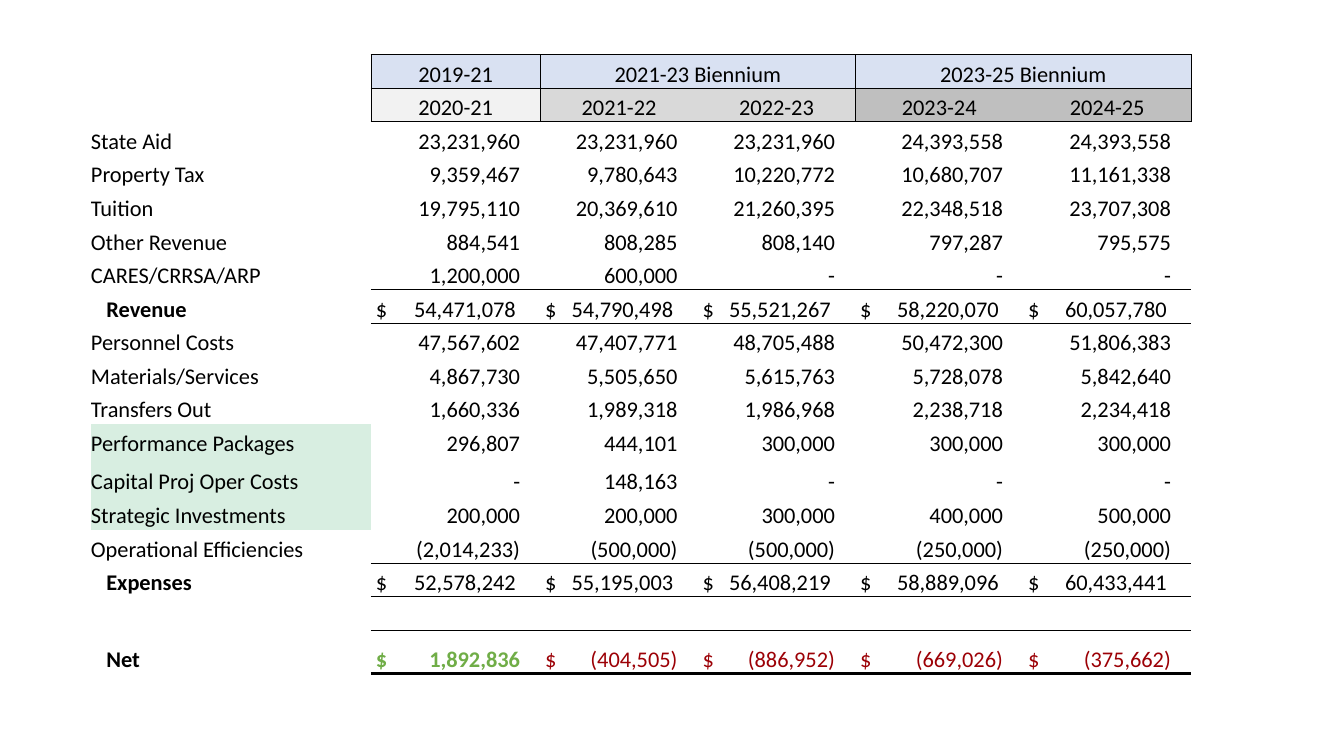
"""Builds a one-slide biennium budget forecast table."""
from lxml import etree
from pptx import Presentation, util as u
from pptx.dml import color
from pptx.enum import text
from pptx.oxml import ns

PX = 6350
COLORS = {
    "ink": "000000", "gain": "70AD47", "loss": "9C0006", "biennium": "D9E1F2",
    "current": "F2F2F2", "next": "D9D9D9", "later": "BFBFBF", "highlight": "D8EEE1",
}
FONT, FONT_SIZE = "Calibri", 16
THIN, THICK = 0.5, 2
COLUMN_WIDTHS = [400, 242, 225, 225, 240, 240]
ROW_HEIGHT = 48
TALL_ROWS = {12: 55, 17: 62}
AMOUNT_INSET, TOTAL_INSET, DOLLAR_INSET, LABEL_INDENT = 29, 35, 7, 22

BIENNIA = [(1, 1, "2019-21"), (2, 3, "2021-23 Biennium"), (4, 5, "2023-25 Biennium")]
YEARS = [("2020-21", "current"), ("2021-22", "next"), ("2022-23", "next"),
         ("2023-24", "later"), ("2024-25", "later")]
BUDGET = [
    ("State Aid", "23,231,960", "23,231,960", "23,231,960", "24,393,558", "24,393,558"),
    ("Property Tax", "9,359,467", "9,780,643", "10,220,772", "10,680,707", "11,161,338"),
    ("Tuition", "19,795,110", "20,369,610", "21,260,395", "22,348,518", "23,707,308"),
    ("Other Revenue", "884,541", "808,285", "808,140", "797,287", "795,575"),
    ("CARES/CRRSA/ARP", "1,200,000", "600,000", "-", "-", "-"),
    ("Revenue", "54,471,078", "54,790,498", "55,521,267", "58,220,070", "60,057,780"),
    ("Personnel Costs", "47,567,602", "47,407,771", "48,705,488", "50,472,300", "51,806,383"),
    ("Materials/Services", "4,867,730", "5,505,650", "5,615,763", "5,728,078", "5,842,640"),
    ("Transfers Out", "1,660,336", "1,989,318", "1,986,968", "2,238,718", "2,234,418"),
    ("Performance Packages", "296,807", "444,101", "300,000", "300,000", "300,000"),
    ("Capital Proj Oper Costs", "-", "148,163", "-", "-", "-"),
    ("Strategic Investments", "200,000", "200,000", "300,000", "400,000", "500,000"),
    ("Operational Efficiencies", "(2,014,233)", "(500,000)", "(500,000)", "(250,000)", "(250,000)"),
    ("Expenses", "52,578,242", "55,195,003", "56,408,219", "58,889,096", "60,433,441"),
    (),
    ("Net", "1,892,836", "(404,505)", "(886,952)", "(669,026)", "(375,662)"),
]
TOTALS = {"Revenue", "Expenses", "Net"}
HIGHLIGHTED = {"Performance Packages", "Capital Proj Oper Costs", "Strategic Investments"}
RULES_BELOW = {-1: THIN, 0: THIN, 1: THIN, 6: THIN, 7: THIN, 14: THIN,
               15: THIN, 16: THIN, 17: THICK}
HEADER_EDGES = [{1, 2, 3, 4, 5, 6}, {1, 2, 4, 6}]


def px(length):
    """Turn whole pixels into EMU."""
    return u.Emu(length * PX)


def rgb(name):
    """Look up a named colour."""
    return color.RGBColor.from_string(COLORS[name])


def write(cell, content, align, ink="ink", bold=False):
    """Add one formatted run to a cell and return its paragraph."""
    paragraph = cell.text_frame.paragraphs[0]
    paragraph.alignment = align
    run = paragraph.add_run()
    run.text = content
    run.font.name, run.font.size, run.font.bold = FONT, u.Pt(FONT_SIZE), bold
    run.font.color.rgb = rgb(ink)
    return paragraph


def fill(cell, name):
    """Give a cell a solid named fill."""
    cell.fill.solid()
    cell.fill.fore_color.rgb = rgb(name)


def draw_border(cell, side, width):
    """Draw one side of a cell, or clear it when the width is zero."""
    properties = cell._tc.get_or_add_tcPr()
    line = etree.SubElement(properties, ns.qn(f"a:ln{side}"), w=str(u.Pt(width)))
    if not width:
        etree.SubElement(line, ns.qn("a:noFill"))
        return
    solid = etree.SubElement(line, ns.qn("a:solidFill"))
    etree.SubElement(solid, ns.qn("a:srgbClr"), val=COLORS["ink"])


def prepare_cell(cell, row, column):
    """Set a cell's margins, anchor and ruled sides."""
    cell.margin_left = cell.margin_right = cell.margin_top = cell.margin_bottom = 0
    cell.vertical_anchor = text.MSO_ANCHOR.BOTTOM
    edges = HEADER_EDGES[row] if row < len(HEADER_EDGES) else set()
    sides = {
        "L": THIN if column in edges else 0,
        "R": THIN if column + 1 in edges else 0,
        "T": RULES_BELOW.get(row - 1, 0) if column else 0,
        "B": RULES_BELOW.get(row, 0) if column else 0,
    }
    for side, width in sides.items():
        draw_border(cell, side, width)
    cell.fill.background()


def write_header(table):
    """Write the biennium and school year headings."""
    for first, last, title in BIENNIA:
        cell = table.cell(0, first)
        if last > first:
            cell.merge(table.cell(0, last))
        fill(cell, "biennium")
        write(cell, title, text.PP_ALIGN.CENTER)
    for column, (year, shade) in enumerate(YEARS, 1):
        cell = table.cell(1, column)
        fill(cell, shade)
        write(cell, year, text.PP_ALIGN.CENTER)


def write_label(cell, label):
    """Write a row label, indented and bold for totals."""
    if label in TOTALS:
        cell.margin_left = px(LABEL_INDENT)
    if label in HIGHLIGHTED:
        fill(cell, "highlight")
    write(cell, label, text.PP_ALIGN.LEFT, bold=label in TOTALS)


def write_amount(cell, amount):
    """Write a right-aligned amount."""
    cell.margin_right = px(AMOUNT_INSET)
    write(cell, amount, text.PP_ALIGN.RIGHT)


def write_total(cell, amount, width, is_net):
    """Write a dollar sign at the left and the amount at a right tab stop."""
    cell.margin_left = px(DOLLAR_INSET)
    gain = is_net and not amount.startswith("(")
    ink = ("gain" if gain else "loss") if is_net else "ink"
    paragraph = write(cell, f"$\t{amount}", text.PP_ALIGN.LEFT, ink, gain)
    inset = AMOUNT_INSET if is_net else TOTAL_INSET
    tabs = etree.SubElement(paragraph._p.get_or_add_pPr(), ns.qn("a:tabLst"))
    etree.SubElement(tabs, ns.qn("a:tab"), pos=str(px(width - DOLLAR_INSET - inset)), algn="r")


def write_budget(table):
    """Write the labelled budget lines."""
    for row, line in enumerate(BUDGET, len(HEADER_EDGES)):
        if not line:
            continue
        label, *amounts = line
        write_label(table.cell(row, 0), label)
        for column, amount in enumerate(amounts, 1):
            cell = table.cell(row, column)
            if label in TOTALS:
                write_total(cell, amount, COLUMN_WIDTHS[column], label == "Net")
            else:
                write_amount(cell, amount)


def add_budget_table(slide):
    """Add the empty table with its sizes and rules."""
    row_count = len(HEADER_EDGES) + len(BUDGET)
    heights = [TALL_ROWS.get(row, ROW_HEIGHT) for row in range(row_count)]
    table = slide.shapes.add_table(
        row_count, len(COLUMN_WIDTHS), px(130), px(78),
        px(sum(COLUMN_WIDTHS)), px(sum(heights))).table
    table.first_row = table.horz_banding = False
    for column, width in zip(table.columns, COLUMN_WIDTHS):
        column.width = px(width)
    for row, height in enumerate(heights):
        table.rows[row].height = px(height)
        for column in range(len(COLUMN_WIDTHS)):
            prepare_cell(table.cell(row, column), row, column)
    return table


def main():
    """Build and save the presentation."""
    presentation = Presentation()
    presentation.slide_width, presentation.slide_height = px(1920), px(1080)
    slide = presentation.slides.add_slide(presentation.slide_layouts[6])
    table = add_budget_table(slide)
    write_header(table)
    write_budget(table)
    presentation.save("out.pptx")


if __name__ == "__main__":
    main()
